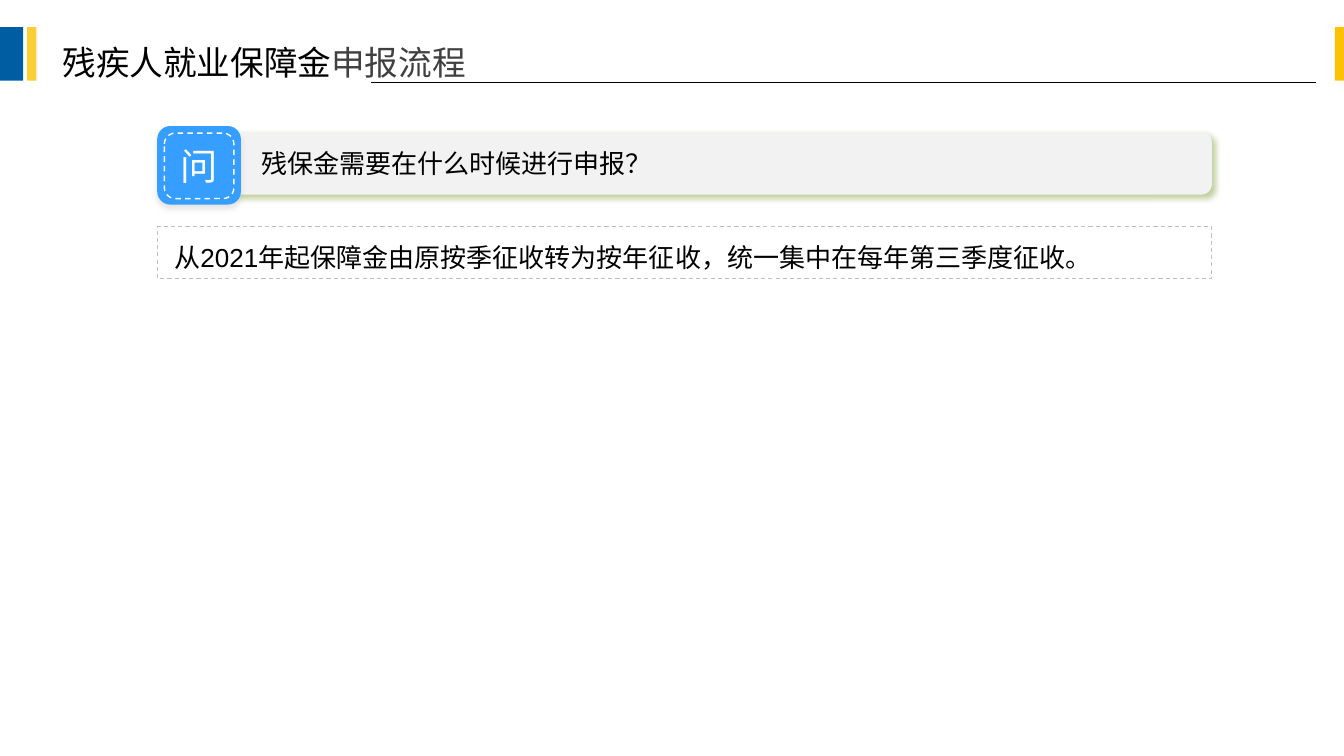
from lxml import etree
from pptx import Presentation
from pptx import util as u
from pptx.dml.color import RGBColor
from pptx.enum import dml, shapes, text
from pptx.oxml import ns

BLACK = RGBColor(0x00, 0x00, 0x00)
WHITE = RGBColor(0xFF, 0xFF, 0xFF)
DARK_GRAY = RGBColor(0x40, 0x40, 0x40)
BORDER_GRAY = RGBColor(0xBF, 0xBF, 0xBF)
PANEL_GRAY = RGBColor(0xF2, 0xF2, 0xF2)
NAVY = RGBColor(0x00, 0x5D, 0xA2)
YELLOW = RGBColor(0xFD, 0xCD, 0x35)
GOLD = RGBColor(0xFB, 0xC2, 0x03)
BADGE_BLUE = RGBColor(0x35, 0x9E, 0xFF)
OLIVE = RGBColor(0x62, 0x87, 0x0A)

RECTANGLE = shapes.MSO_SHAPE.RECTANGLE
ROUNDED = shapes.MSO_SHAPE.ROUNDED_RECTANGLE
PANEL = shapes.MSO_SHAPE.FLOWCHART_ALTERNATE_PROCESS


class SlideBuilder:
    font = "Arial"
    body_size = 18.6

    def __init__(self, presentation):
        self.slide = presentation.slides.add_slide(presentation.slide_layouts[5])

    def format_run(self, run, size, color):
        run.font.name = self.font
        run.font.size = u.Pt(size)
        run.font.color.rgb = color

    def title(self, box, parts):
        shape = self.slide.shapes.title
        shape.left, shape.top, shape.width, shape.height = map(u.Inches, box)
        frame = shape.text_frame
        frame.auto_size = text.MSO_AUTO_SIZE.NONE
        frame.vertical_anchor = text.MSO_ANCHOR.MIDDLE
        paragraph = frame.paragraphs[0]
        paragraph.alignment = text.PP_ALIGN.LEFT
        for wording, color in parts:
            run = paragraph.add_run()
            run.text = wording
            self.format_run(run, 24, color)

    def shape(self, kind, box, fill=None, border=None, border_width=0.75):
        shape = self.slide.shapes.add_shape(kind, *map(u.Inches, box))
        shape.shadow.inherit = False
        if fill is None:
            shape.fill.background()
        else:
            shape.fill.solid()
            shape.fill.fore_color.rgb = fill
        if border is None:
            shape.line.fill.background()
        else:
            shape.line.color.rgb = border
            shape.line.width = u.Pt(border_width)
            shape.line.dash_style = dml.MSO_LINE.DASH
        return shape

    def shadow(self, shape, color, angle):
        effects = shape.element.spPr.find(ns.qn("a:effectLst"))
        outer = etree.SubElement(
            effects, ns.qn("a:outerShdw"), blurRad=str(u.Pt(4)),
            dist=str(u.Pt(3)), dir=str(angle * 60000), rotWithShape="0")
        tint = etree.SubElement(outer, ns.qn("a:srgbClr"), val=str(color))
        etree.SubElement(tint, ns.qn("a:alpha"), val="40000")

    def label(self, shape, wording, margins, size=body_size, color=BLACK,
              alignment=text.PP_ALIGN.LEFT, anchor=text.MSO_ANCHOR.MIDDLE,
              line_spacing=None):
        frame = shape.text_frame
        frame.word_wrap = True
        frame.vertical_anchor = anchor
        (frame.margin_left, frame.margin_top,
         frame.margin_right, frame.margin_bottom) = map(u.Inches, margins)
        frame.text = wording
        paragraph = frame.paragraphs[0]
        paragraph.alignment = alignment
        if line_spacing:
            paragraph.line_spacing = u.Pt(line_spacing)
        self.format_run(paragraph.runs[0], size, color)

    def line(self, start, end, color):
        connector = self.slide.shapes.add_connector(
            shapes.MSO_CONNECTOR.STRAIGHT, *map(u.Inches, start + end))
        connector.line.color.rgb = color
        connector.line.width = u.Pt(0.75)
        etree.SubElement(connector.element.spPr, ns.qn("a:effectLst"))


def main():
    presentation = Presentation()
    presentation.slide_width = u.Inches(13.33)
    presentation.slide_height = u.Inches(7.5)
    builder = SlideBuilder(presentation)

    builder.title((0.52, 0.37, 4.48, 0.5),
                  [("残疾人就业保障金", BLACK), ("申报流程", DARK_GRAY)])
    builder.line((3.68, 0.82), (13.05, 0.82), BLACK)
    for left, width, color in [(0, 0.23, NAVY), (0.27, 0.09, YELLOW), (13.24, 0.09, GOLD)]:
        builder.shape(RECTANGLE, (left, 0.27, width, 0.53), color)

    question = builder.shape(PANEL, (1.98, 1.31, 10.04, 0.62), PANEL_GRAY)
    builder.shadow(question, OLIVE, 45)
    builder.label(question, "残保金需要在什么时候进行申报？", (0.58, 0.07, 0.13, 0.07))

    badge = builder.shape(ROUNDED, (1.56, 1.25, 0.83, 0.78), BADGE_BLUE)
    builder.shadow(badge, BORDER_GRAY, 90)
    stitching = builder.shape(ROUNDED, (1.63, 1.32, 0.69, 0.65), border=WHITE, border_width=1)
    builder.label(stitching, "问", (0, 0, 0, 0), 26.6, WHITE, text.PP_ALIGN.CENTER)

    answer = builder.shape(RECTANGLE, (1.56, 2.25, 10.46, 0.51), border=BORDER_GRAY)
    builder.label(answer, "从2021年起保障金由原按季征收转为按年征收，统一集中在每年第三季度征收。",
                  (0.17, 0.05, 0.1, 0.05), anchor=text.MSO_ANCHOR.TOP, line_spacing=29.4)

    presentation.save("out.pptx")


if __name__ == "__main__":
    main()
